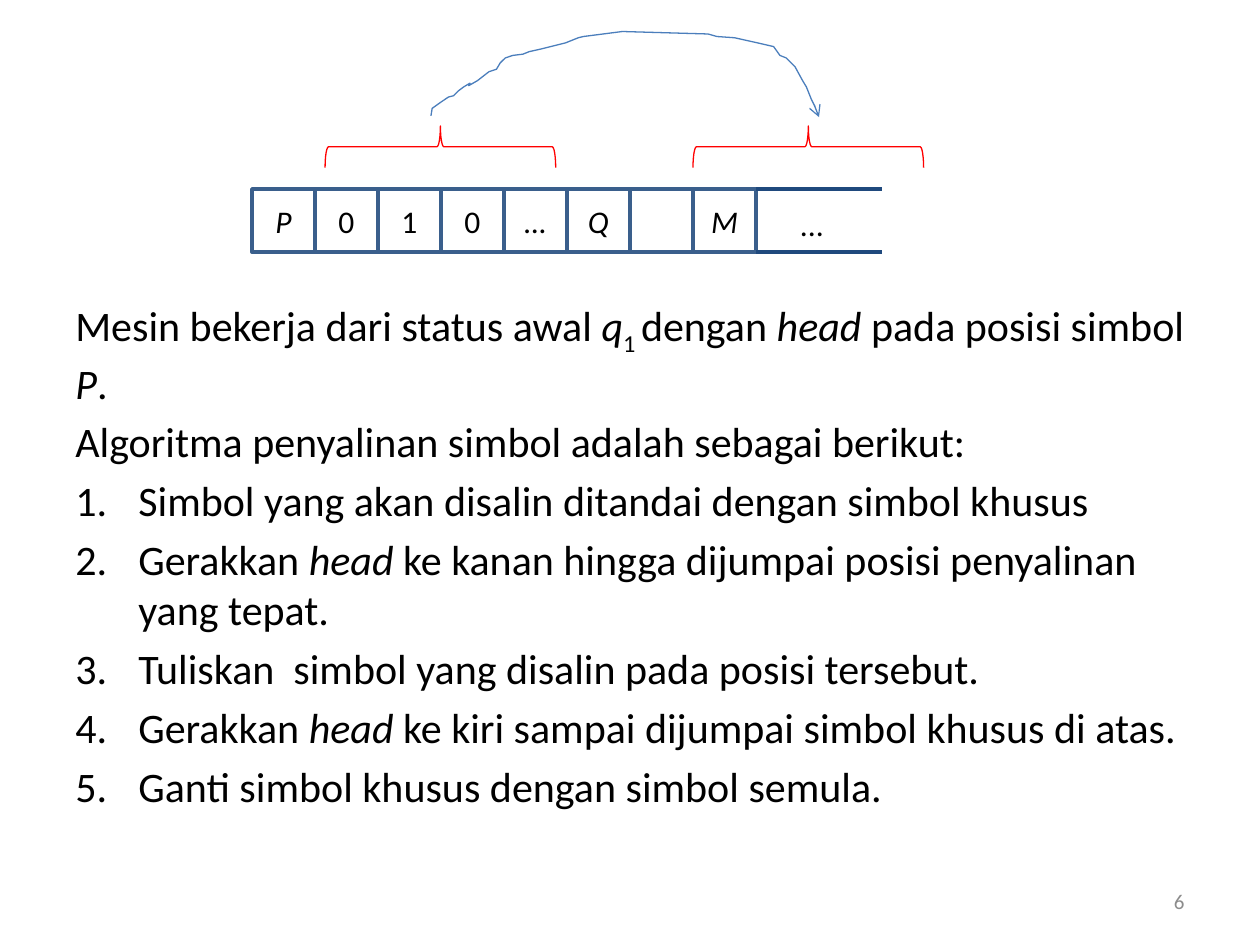
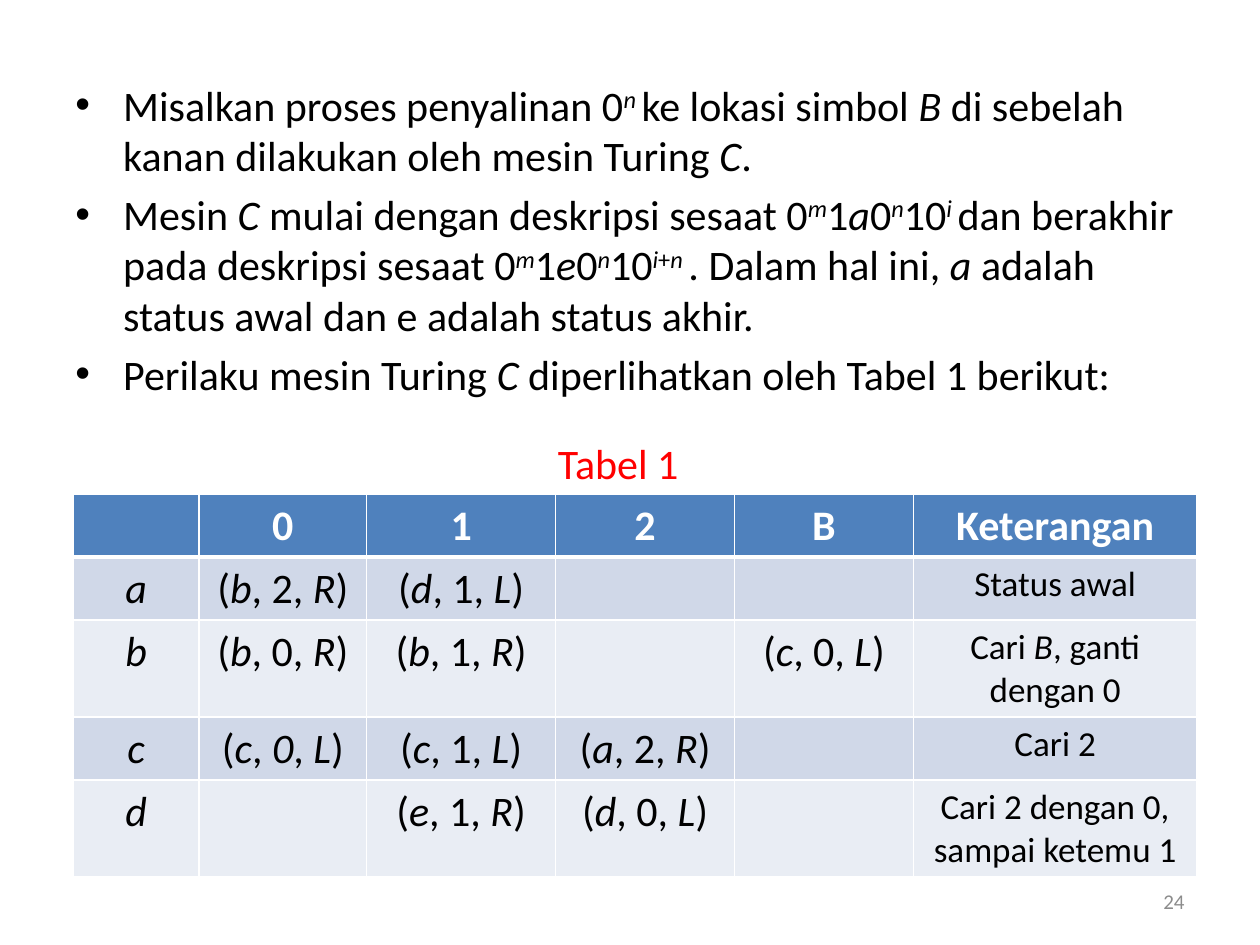
from lxml import etree
from pptx import Presentation
from pptx.dml.color import RGBColor
from pptx.enum.shapes import MSO_CONNECTOR, MSO_SHAPE
from pptx.enum.text import MSO_ANCHOR, PP_ALIGN
from pptx.oxml.ns import qn
from pptx.util import Inches, Pt

FONT = "Calibri"
COLORS = {
    "text": "000000", "white": "FFFFFF", "number": "8C8C8C", "red": "FF0000",
    "cell": "3A5F8C", "edge": "1F497D", "curve": "4B7EBC",
    "header": "4F81BD", "band_dark": "D0D8E8", "band_light": "E9EDF4",
}
LEFT, CENTER, RIGHT = PP_ALIGN.LEFT, PP_ALIGN.CENTER, PP_ALIGN.RIGHT
TOP, MIDDLE = MSO_ANCHOR.TOP, MSO_ANCHOR.MIDDLE
RECT, BRACE = MSO_SHAPE.RECTANGLE, MSO_SHAPE.LEFT_BRACE
STRAIGHT = MSO_CONNECTOR.STRAIGHT
BASELINES = {"^": "30000", "_": "-25000"}
NUMBER = ("a:buAutoNum", {"type": "arabicPeriod"}, 0.5)
BULLET = ("a:buChar", {"char": "•"}, 0.38)

ALGORITHM = [
    ("Mesin bekerja dari status awal *q*_1 _dengan *head *pada posisi simbol *P*.", None),
    ("Algoritma penyalinan simbol adalah sebagai berikut:", None),
    ("Simbol yang akan disalin ditandai dengan simbol khusus", NUMBER),
    ("Gerakkan *head *ke kanan hingga dijumpai posisi penyalinan yang tepat.", NUMBER),
    ("Tuliskan  simbol yang disalin pada posisi tersebut.", NUMBER),
    ("Gerakkan *head *ke kiri sampai dijumpai simbol khusus di atas.", NUMBER),
    ("Ganti simbol khusus dengan simbol semula.", NUMBER),
]
COPY_MACHINE = [
    ("Misalkan proses penyalinan 0*^n ^*ke lokasi simbol *B *di sebelah kanan "
     "dilakukan oleh mesin Turing *C*.", BULLET),
    ("Mesin *C *mulai dengan deskripsi sesaat 0*^m^*1*a*0*^n^*10*^i ^*dan berakhir "
     "pada deskripsi sesaat 0*^m^*1*e*0*^n^*10^*i*+*n *^. Dalam hal ini, *a *adalah "
     "status awal dan e adalah status akhir.", BULLET),
    ("Perilaku mesin Turing *C *diperlihatkan oleh Tabel 1 berikut:", BULLET),
]
TAPE = ["*P*", "0", "1", "0", "*…*", "*Q*", "", "*M*"]
CURVE = [
    (3.42, 0.92), (3.43, 0.86), (3.5, 0.81), (3.56, 0.77), (3.6, 0.76), (3.64, 0.72),
    (3.68, 0.69), (3.73, 0.66), (3.72, 0.68), (3.79, 0.64), (3.88, 0.57), (3.94, 0.55),
    (3.97, 0.5), (4.01, 0.46), (4.07, 0.44), (4.15, 0.43), (4.2, 0.41), (4.29, 0.39),
    (4.41, 0.36), (4.49, 0.34), (4.59, 0.3), (4.63, 0.29), (4.94, 0.25), (5.62, 0.27),
    (5.69, 0.29), (5.83, 0.3), (6.01, 0.34), (6.14, 0.37), (6.19, 0.44), (6.24, 0.46),
    (6.31, 0.53), (6.37, 0.64), (6.4, 0.69), (6.44, 0.79), (6.47, 0.85), (6.5, 0.93),
]
COLUMN_WIDTHS = [1, 1.33, 1.5, 1.42, 1.42, 2.25]
ROW_HEIGHTS = [0.5, 0.5, 0.77, 0.5, 0.77]
TRANSITIONS = [
    ["", "0", "1", "2", "B", "Keterangan"],
    ["*a*", "(*b*, 2, *R*)", "(*d*, 1, *L*)", "", "", "Status awal"],
    ["*b*", "(*b*, 0, *R*)", "(*b*, 1, *R*)", "", "(*c*, 0, *L*)",
     "Cari *B*, ganti dengan 0"],
    ["*c*", "(*c*, *0*, *L*)", "(*c*, 1, *L*)", "(*a*, 2, *R*)", "", "Cari 2"],
    ["*d*", "", "(*e*, 1, *R*)", "(*d*, 0, *L*)", "", "Cari 2 dengan 0, sampai ketemu 1"],
]


def rgb(name):
    return RGBColor.from_string(COLORS[name])


def split_markup(text):
    italic, mark, chunk = False, None, ""
    for ch in text:
        if ch not in "*^_":
            chunk += ch
            continue
        if chunk:
            yield chunk, italic, mark
        chunk = ""
        if ch == "*":
            italic = not italic
        else:
            mark = None if mark else ch
    if chunk:
        yield chunk, italic, mark


def write(p, text, size, color="text", align=LEFT, bold=False):
    p.alignment = align
    for chunk, italic, mark in split_markup(text):
        r = p.add_run()
        r.text = chunk
        r.font.name, r.font.size = FONT, Pt(size)
        r.font.bold, r.font.italic = bold, italic
        r.font.color.rgb = rgb(color)
        if mark:
            r.font._element.set("baseline", BASELINES[mark])


def add_text(slide, box, text, size, color="text", align=LEFT, anchor=TOP, wrap=True):
    tf = slide.shapes.add_textbox(*map(Inches, box)).text_frame
    tf.word_wrap, tf.vertical_anchor = wrap, anchor
    write(tf.paragraphs[0], text, size, color, align)
    return tf


def set_marker(p, marker):
    tag, attributes, indent = marker
    pPr = p._p.get_or_add_pPr()
    pPr.set("marL", str(Inches(indent)))
    pPr.set("indent", str(-Inches(indent)))
    etree.SubElement(pPr, qn("a:buFont"), typeface="Arial" if tag == "a:buChar" else "+mj-lt")
    etree.SubElement(pPr, qn(tag), attributes)


def add_body(slide, box, items):
    tf = slide.shapes.add_textbox(*map(Inches, box)).text_frame
    tf.word_wrap = True
    for i, (text, marker) in enumerate(items):
        p = tf.add_paragraph() if i else tf.paragraphs[0]
        if i:
            p.space_before = Pt(4.8)
        if marker:
            set_marker(p, marker)
        write(p, text, 24)


def add_page_number(slide, number):
    add_text(slide, (7.17, 6.95, 2.33, 0.4), number, 12, "number", RIGHT, MIDDLE)


def style_outline(sp, color, width):
    sp.shadow.inherit = False
    sp.fill.background()
    sp.line.color.rgb = rgb(color)
    sp.line.width = Pt(width)


def add_tape_cell(slide, left, symbol):
    sp = slide.shapes.add_shape(RECT, *map(Inches, (left, 1.5, 0.5, 0.5)))
    style_outline(sp, "cell", 2)
    tf = sp.text_frame
    tf.vertical_anchor = MIDDLE
    write(tf.paragraphs[0], symbol, 18, align=CENTER)


def add_tape_edge(slide, y):
    line = slide.shapes.add_connector(STRAIGHT, *map(Inches, (6, y, 7, y)))
    line.line.color.rgb = rgb("edge")
    line.line.width = Pt(2)
    etree.SubElement(line._element.spPr, qn("a:effectLst"))


def add_brace(slide, left):
    sp = slide.shapes.add_shape(BRACE, *map(Inches, (left, 0.25, 0.33, 1.83)))
    sp.rotation = 90
    style_outline(sp, "red", 0.75)


def add_curved_arrow(slide, points):
    points = [(Inches(x), Inches(y)) for x, y in points]
    builder = slide.shapes.build_freeform(*points[0])
    builder.add_line_segments(points[1:], close=False)
    sp = builder.convert_to_shape()
    style_outline(sp, "curve", 0.75)
    etree.SubElement(sp.line._get_or_add_ln(), qn("a:tailEnd"), type="arrow")


def set_borders(cell, widths):
    tcPr = cell._tc.get_or_add_tcPr()
    for side, width in widths.items():
        ln = etree.SubElement(tcPr, qn(f"a:ln{side}"), w=str(Pt(width)))
        fill = etree.SubElement(ln, qn("a:solidFill"))
        etree.SubElement(fill, qn("a:srgbClr"), val=COLORS["white"])


def add_transition_table(slide, left, top):
    frame = slide.shapes.add_table(
        len(ROW_HEIGHTS), len(COLUMN_WIDTHS), Inches(left), Inches(top),
        Inches(sum(COLUMN_WIDTHS)), Inches(sum(ROW_HEIGHTS)))
    table = frame.table
    for column, width in zip(table.columns, COLUMN_WIDTHS):
        column.width = Inches(width)
    for i, (row, height) in enumerate(zip(table.rows, ROW_HEIGHTS)):
        row.height = Inches(height)
        header = i == 0
        band = "header" if header else "band_dark" if i % 2 else "band_light"
        for j, text in enumerate(TRANSITIONS[i]):
            cell = table.cell(i, j)
            set_borders(cell, {"L": 1, "R": 1, "T": 3 if i == 1 else 1,
                               "B": 3 if header else 1})
            cell.fill.solid()
            cell.fill.fore_color.rgb = rgb(band)
            note = j == len(COLUMN_WIDTHS) - 1 and not header
            write(cell.text_frame.paragraphs[0], text, 20 if note else 24,
                  "white" if header else "text", CENTER, header)


def build_tape_slide(slide):
    add_body(slide, (0.5, 2.33, 9, 4.37), ALGORITHM)
    add_page_number(slide, "6")
    for i, symbol in enumerate(TAPE):
        add_tape_cell(slide, 2 + 0.5 * i, symbol)
    for y in (1.5, 2):
        add_tape_edge(slide, y)
    add_text(slide, (6.25, 1.58, 0.39, 0.4), "...", 18, wrap=False)
    add_curved_arrow(slide, CURVE)
    for left in (3.33, 6.25):
        add_brace(slide, left)


def build_table_slide(slide):
    add_body(slide, (0.5, 0.58, 9, 6.12), COPY_MACHINE)
    add_page_number(slide, "24")
    add_transition_table(slide, 0.58, 3.92)
    add_text(slide, (4.33, 3.42, 1.17, 0.5), "Tabel 1", 24, "red", wrap=False)


def main():
    prs = Presentation()
    prs.slide_width, prs.slide_height = Inches(10), Inches(7.5)
    for build in (build_tape_slide, build_table_slide):
        build(prs.slides.add_slide(prs.slide_layouts[6]))
    prs.save("out.pptx")


if __name__ == "__main__":
    main()
